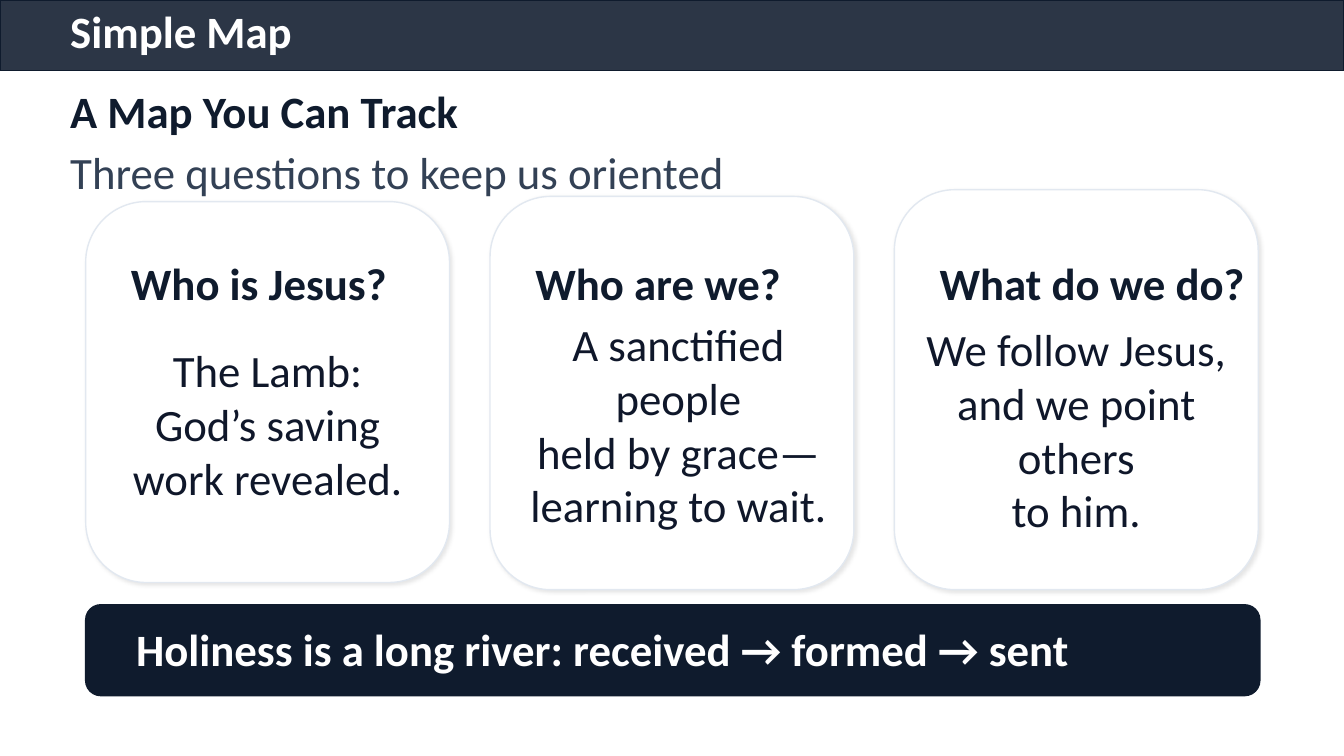
from dataclasses import dataclass

from lxml import etree
from pptx import Presentation, dml, util as u
from pptx.dml import color
from pptx.enum import shapes, text
from pptx.oxml import ns

NAVY, INK, SLATE, EDGE, WHITE = "0F1B2D", "0F172A", "334155", "E2E8F0", "FFFFFF"
RECT = shapes.MSO_SHAPE.RECTANGLE
ROUND = shapes.MSO_SHAPE.ROUNDED_RECTANGLE
MID = text.PP_ALIGN.CENTER
FONT = {"name": "Calibri", "size": u.Pt(32)}


@dataclass
class Box:
    left: float
    top: float
    width: float
    height: float

    def cm(self) -> list:
        return [u.Cm(n) for n in (self.left, self.top, self.width, self.height)]


@dataclass
class Card:
    top: float
    height: float
    head: str
    wide: float  # width of the head
    body: list
    area: Box  # body box, its left counted from the card's edge


CARDS = [
    Card(5.08, 9.6, "Who is Jesus?", 7.39,
         ["The Lamb:", "God’s saving work revealed."],
         Box(0.89, 8.13, 7.39, 5.08)),
    Card(4.95, 9.91, "Who are we?", 7.39,
         ["A sanctified people", "held by grace—", "learning to wait."],
         Box(0.33, 8.18, 8.84, 5.03)),
    Card(4.78, 10.08, "What do we do?", 8.48,
         ["We follow Jesus,", "and we point others", "to him."],
         Box(0, 8.28, 9.17, 5.08)),
]
EDGE_X, STEP, WIDTH = 2.16, 10.19, 9.17


def rgb(code: str) -> color.RGBColor:
    return color.RGBColor.from_string(code)


def set_alpha(node, share: int) -> None:
    etree.SubElement(node, ns.qn("a:alpha"), val=str(share * 1000))


def add_panel(slide, kind, box: Box, fill: str, line: str):
    panel = slide.shapes.add_shape(kind, *box.cm())
    panel.shadow.inherit = False
    panel.fill.solid()
    panel.fill.fore_color.rgb = rgb(fill)
    panel.line.color.rgb = rgb(line)
    panel.line.width = u.Pt(1)
    return panel


def add_shade(panel) -> None:
    """Give the panel a faint shadow to the lower right."""
    list_ = panel.element.spPr.find(ns.qn("a:effectLst"))
    shade = etree.SubElement(
        list_, ns.qn("a:outerShdw"), blurRad=str(u.Pt(3)), dist=str(u.Pt(1.5)),
        dir=str(45 * 60000), algn="ctr", rotWithShape="0")
    set_alpha(etree.SubElement(shade, ns.qn("a:srgbClr"), val="000000"), 10)


def add_text(slide, box: Box, lines: list, ink: str, bold: bool = True,
             align=None) -> None:
    frame = slide.shapes.add_textbox(*box.cm()).text_frame
    frame.word_wrap = True
    frame.vertical_anchor = text.MSO_ANCHOR.MIDDLE
    frame.text = "\n".join(lines)
    for para in frame.paragraphs:
        para.alignment = align
        font = para.runs[0].font
        for key, value in {**FONT, "bold": bold}.items():
            setattr(font, key, value)
        font.color.rgb = rgb(ink)


def add_card(slide, left: float, card: Card) -> None:
    add_shade(add_panel(slide, ROUND, Box(left, card.top, WIDTH, card.height),
                        WHITE, EDGE))
    add_text(slide, Box(left + 0.89, 6.6, card.wide, 1.02), [card.head], NAVY)
    area = card.area
    add_text(slide, Box(left + area.left, area.top, area.width, area.height),
             card.body, INK, False, MID)


def main() -> None:
    deck = Presentation()
    deck.slide_width, deck.slide_height = u.Cm(33.87), u.Cm(19.05)
    slide = deck.slides.add_slide(deck.slide_layouts[6])

    bar = add_panel(slide, RECT, Box(0, 0, 33.87, 1.78), NAVY, NAVY)
    tint = bar.element.spPr.find(ns.qn("a:solidFill"))
    set_alpha(tint.find(ns.qn("a:srgbClr")), 88)
    add_text(slide, Box(1.52, 0.38, 30.99, 0.76), ["Simple Map"], WHITE)
    add_text(slide, Box(1.52, 1.78, 30.73, 2.03), ["A Map You Can Track"], NAVY)
    add_text(slide, Box(1.52, 3.68, 30.73, 1.27),
             ["Three questions to keep us oriented"], SLATE, False)

    for i, card in enumerate(CARDS):
        add_card(slide, EDGE_X + i * STEP, card)

    add_panel(slide, ROUND, Box(EDGE_X, 15.24, 29.59, 2.29), NAVY, NAVY)
    add_text(slide, Box(3.18, 15.7, 27.69, 1.27),
             ["Holiness is a long river: received → formed → sent"], WHITE)
    deck.save("out.pptx")


if __name__ == "__main__":
    main()
